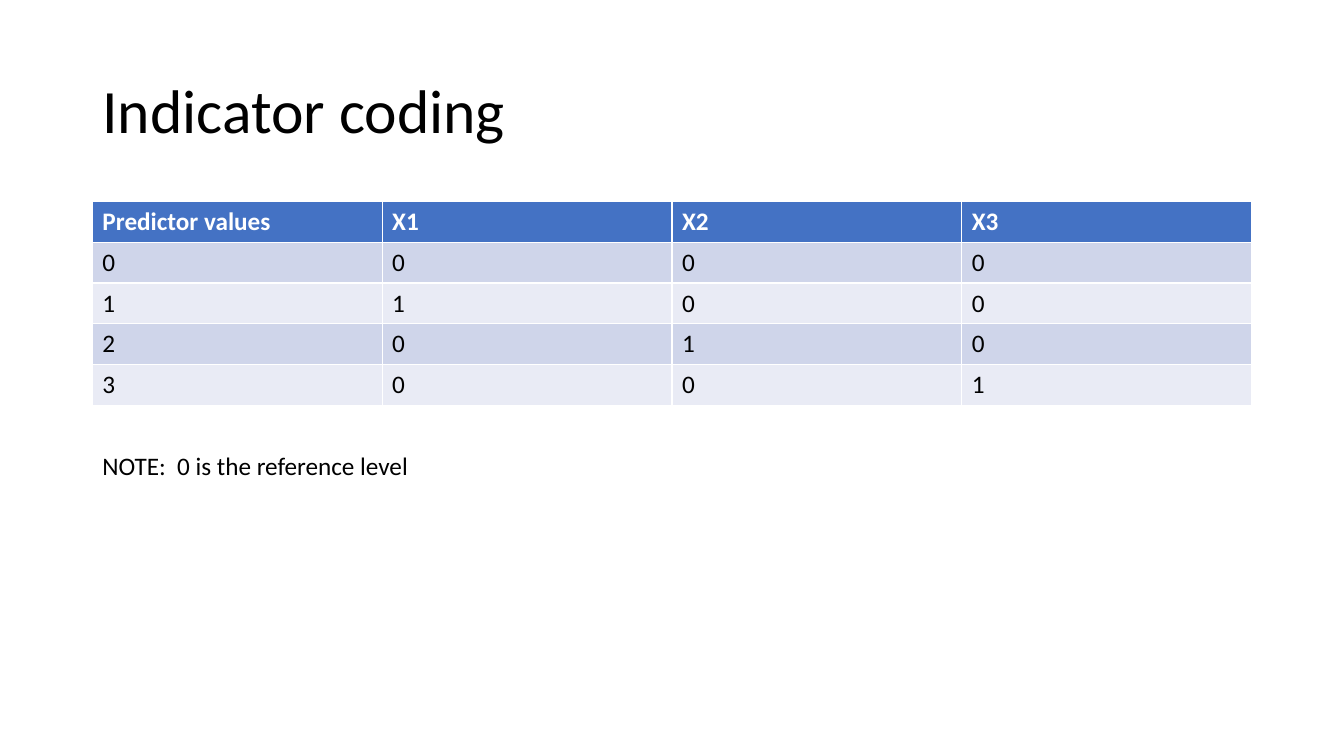
"""Build a slide that shows indicator coding for a four-level predictor."""
import dataclasses

import pptx
import pptx.dml.color
import pptx.enum.text
import pptx.util


@dataclasses.dataclass(frozen=True)
class Theme:
    font: str = "Calibri"
    title_size: int = 44
    body_size: int = 18
    text: str = "000000"
    header_text: str = "FFFFFF"
    header_fill: str = "4472C4"
    band_fills: tuple = ("CFD5EA", "E9EBF5")


theme = Theme()
Pt = pptx.util.Pt
RGBColor = pptx.dml.color.RGBColor


def write_text(frame, text, size=theme.body_size, color=theme.text, bold=False, line_spacing=1.0):
    paragraph = frame.paragraphs[0]
    paragraph.alignment = pptx.enum.text.PP_ALIGN.LEFT
    paragraph.line_spacing = line_spacing
    run = paragraph.add_run()
    run.text = text
    run.font.name = theme.font
    run.font.size = Pt(size)
    run.font.bold = bold
    run.font.color.rgb = RGBColor.from_string(color)


presentation = pptx.Presentation()
presentation.slide_width = Pt(960)
presentation.slide_height = Pt(540)
slide = presentation.slides.add_slide(presentation.slide_layouts[5])

left, width = Pt(66), Pt(828)

title = slide.shapes.title
title.left, title.top, title.width, title.height = left, Pt(28.75), width, Pt(104.4)
title.text_frame.vertical_anchor = pptx.enum.text.MSO_ANCHOR.MIDDLE
title.text_frame.auto_size = pptx.enum.text.MSO_AUTO_SIZE.NONE
write_text(title.text_frame, "Indicator coding", size=theme.title_size, line_spacing=0.9)

levels = range(4)
indicators = range(1, 4)
rows = [["Predictor values"] + [f"X{indicator}" for indicator in indicators]]
for level in levels:
    rows.append([str(level)] + [str(int(level == indicator)) for indicator in indicators])

row_height = Pt(29.2)
table = slide.shapes.add_table(
    len(rows), len(rows[0]), left, Pt(143.75), width, row_height * len(rows)
).table
for row_index, values in enumerate(rows):
    table.rows[row_index].height = row_height
    is_header = row_index == 0
    fill = theme.header_fill if is_header else theme.band_fills[(row_index - 1) % 2]
    color = theme.header_text if is_header else theme.text
    for column_index, value in enumerate(values):
        cell = table.cell(row_index, column_index)
        cell.fill.solid()
        cell.fill.fore_color.rgb = RGBColor.from_string(fill)
        write_text(cell.text_frame, value, color=color, bold=is_header)

note = slide.shapes.add_textbox(left, Pt(318.25), Pt(258.5), Pt(29))
note.text_frame.word_wrap = True
note.text_frame.auto_size = pptx.enum.text.MSO_AUTO_SIZE.SHAPE_TO_FIT_TEXT
write_text(note.text_frame, "NOTE:  0 is the reference level")

presentation.save("out.pptx")
